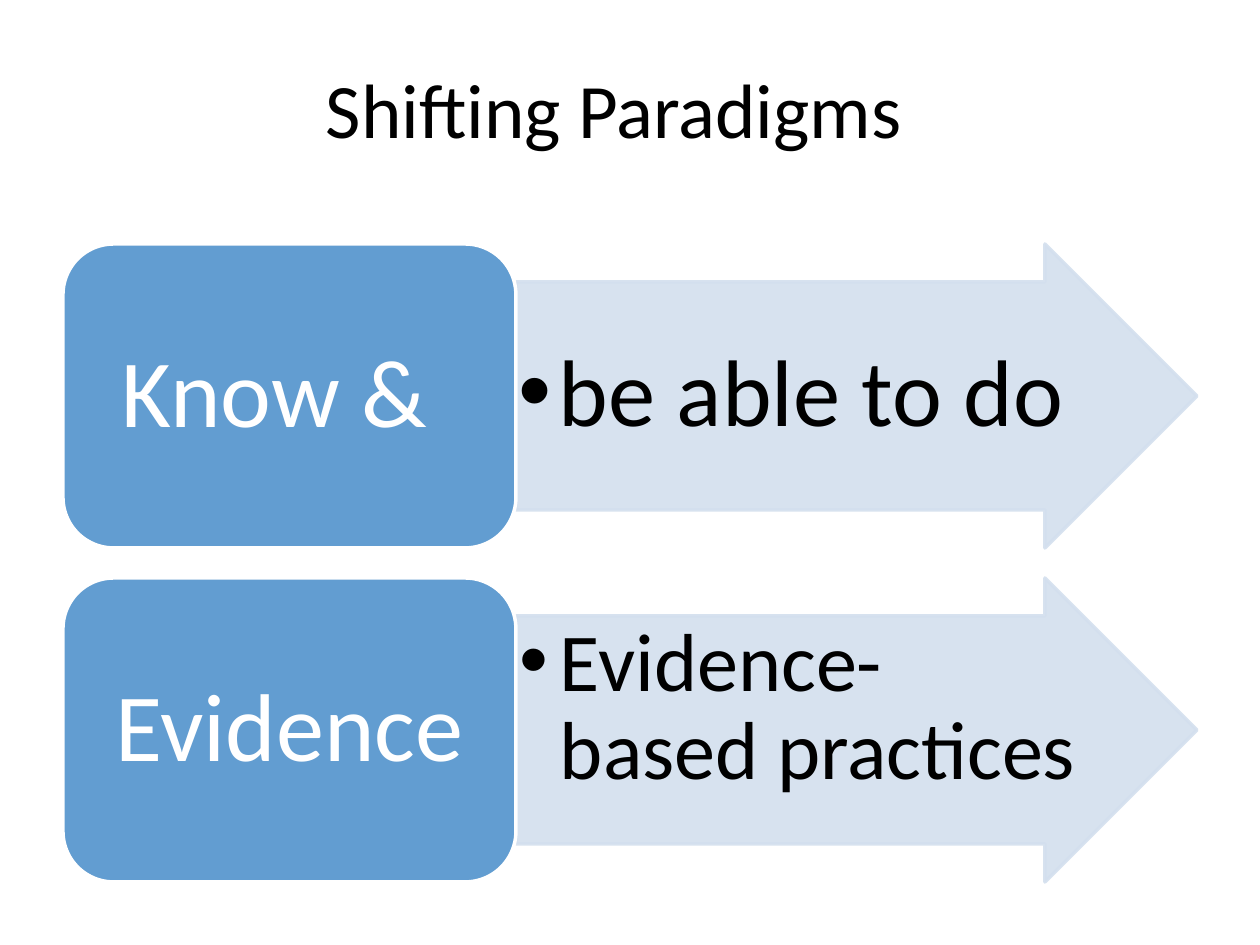
from dataclasses import dataclass

from lxml import etree
from pptx import Presentation
from pptx import util as u
from pptx.dml.color import RGBColor
from pptx.enum import shapes, text
from pptx.oxml.ns import qn

PX_PER_INCH = 126


@dataclass(frozen=True)
class Theme:
    font: str = "Calibri"
    bullet_font: str = "Arial"
    ink: str = "000000"
    light: str = "FFFFFF"
    block: str = "629DD1"
    arrow: str = "D3DFEE"
    arrow_alpha: int = 90
    title_size: int = 44
    label_size: int = 55
    line_width: int = 2


THEME = Theme()


def px(length):
    return u.Emu(round(length * 914400 / PX_PER_INCH))


def place(add, kind, box):
    return add(*kind, *(px(length) for length in box))


def write(shape, words, size, color, margins, paragraph_format, anchor, indent=0):
    """Fill a shape with one paragraph, bulleted if indented; margins run left, top, right, bottom."""
    frame = shape.text_frame
    sides = ("left", "top", "right", "bottom")
    frame_format = {f"margin_{side}": px(m) for side, m in zip(sides, margins)}
    frame_format.update(word_wrap=True, vertical_anchor=anchor)
    for name, value in frame_format.items():
        setattr(frame, name, value)
    paragraph = frame.paragraphs[0]
    for name, value in paragraph_format.items():
        setattr(paragraph, name, value)
    if indent:
        add_bullet(paragraph, indent)
    run = paragraph.add_run()
    run.text = words
    run.font.name = THEME.font
    run.font.size = u.Pt(size)
    run.font.color.rgb = RGBColor.from_string(color)


def paint(shape, fill, line):
    shape.shadow.inherit = False
    shape.fill.solid()
    shape.fill.fore_color.rgb = RGBColor.from_string(fill)
    shape.line.color.rgb = RGBColor.from_string(line)
    shape.line.width = u.Pt(THEME.line_width)


def make_translucent(shape, percent):
    for color in shape._element.spPr.iter(qn("a:srgbClr")):
        etree.SubElement(color, qn("a:alpha"), val=str(percent * 1000))


def add_bullet(paragraph, indent):
    properties = paragraph._p.get_or_add_pPr()
    properties.set("marL", str(px(indent)))
    properties.set("indent", str(-px(indent)))
    etree.SubElement(properties, qn("a:buFont"), typeface=THEME.bullet_font)
    etree.SubElement(properties, qn("a:buChar"), char="•")


def draw_title(slide, box, words):
    title = place(slide.shapes.add_textbox, (), box)
    write(title, words, THEME.title_size, THEME.ink, (13, 6, 13, 6),
          {"alignment": text.PP_ALIGN.CENTER}, text.MSO_ANCHOR.MIDDLE)


def draw_shift(slide, box, label, label_shift, outcome, outcome_size, margin, anchor):
    """A rounded label block, two fifths of the width, leading into an arrow."""
    left, top, width, height = box
    block_width = width * 2 // 5
    arrow_left, arrow_width = left + block_width, width - block_width

    arrow = place(slide.shapes.add_shape, (shapes.MSO_SHAPE.RIGHT_ARROW,),
                  (arrow_left, top, arrow_width, height))
    arrow.adjustments[0], arrow.adjustments[1] = 0.75, 0.5
    paint(arrow, THEME.arrow, THEME.arrow)
    make_translucent(arrow, THEME.arrow_alpha)

    outcome_box = place(slide.shapes.add_textbox, (),
                        (arrow_left, top + height // 8,
                         arrow_width - height * 3 // 8, height * 3 // 4))
    write(outcome_box, outcome, outcome_size, THEME.ink, (margin,) * 4,
          {"alignment": text.PP_ALIGN.LEFT, "line_spacing": 0.9}, anchor, indent=40)

    block = place(slide.shapes.add_shape, (shapes.MSO_SHAPE.ROUNDED_RECTANGLE,),
                  (left, top, block_width, height))
    paint(block, THEME.block, THEME.light)
    write(block, label, THEME.label_size, THEME.light,
          (29, 14, 29 + 2 * label_shift, 14),
          {"alignment": text.PP_ALIGN.CENTER, "line_spacing": 0.9},
          text.MSO_ANCHOR.MIDDLE)


def main():
    deck = Presentation()
    deck.slide_width, deck.slide_height = px(1260), px(945)
    slide = deck.slides.add_slide(deck.slide_layouts[6])

    draw_title(slide, (31, 11, 1166, 194), "Shifting Paradigms")
    shifts = [
        ("Know &", 15, "be able to do", 54, 3, text.MSO_ANCHOR.MIDDLE),
        ("Evidence", 0, "Evidence-based practices", 47, 4, text.MSO_ANCHOR.TOP),
    ]
    top, height, gap = 244, 304, 30
    for row, shift in enumerate(shifts):
        draw_shift(slide, (63, top + row * (height + gap), 1134, height), *shift)

    deck.save("out.pptx")


if __name__ == "__main__":
    main()
